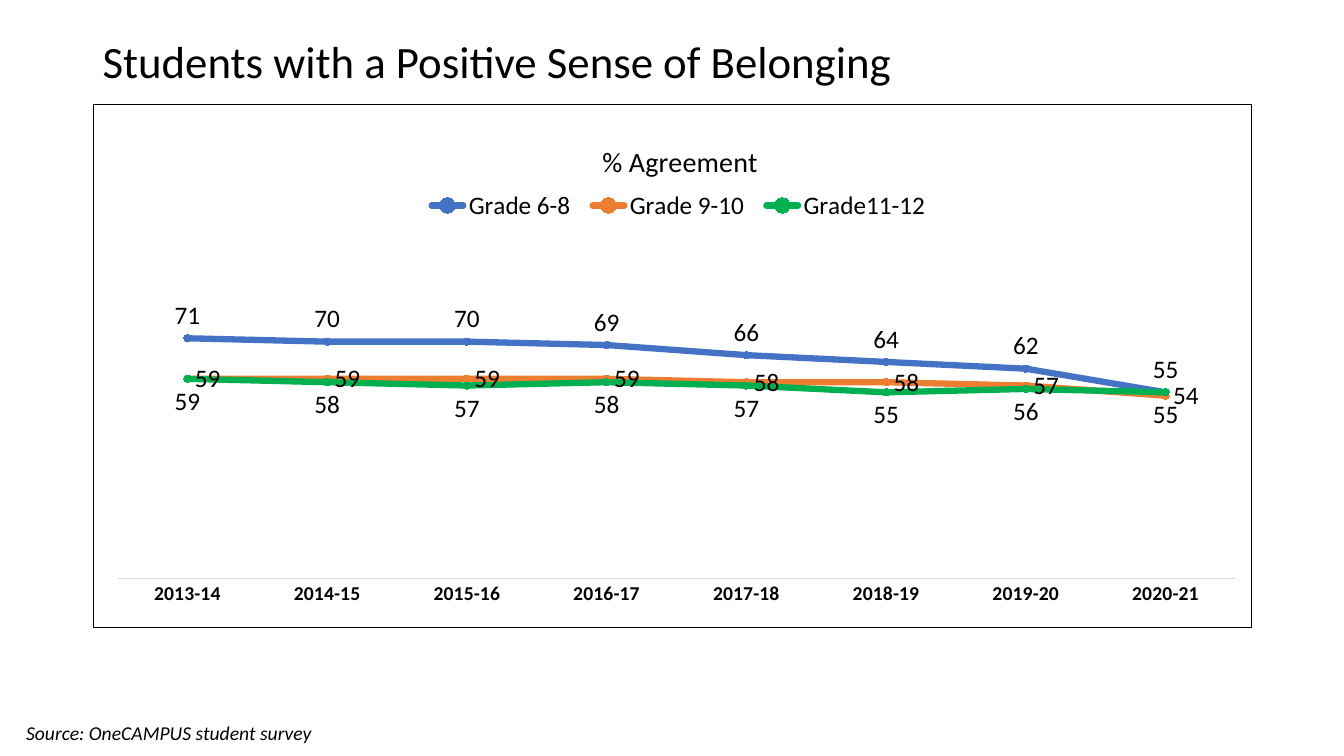
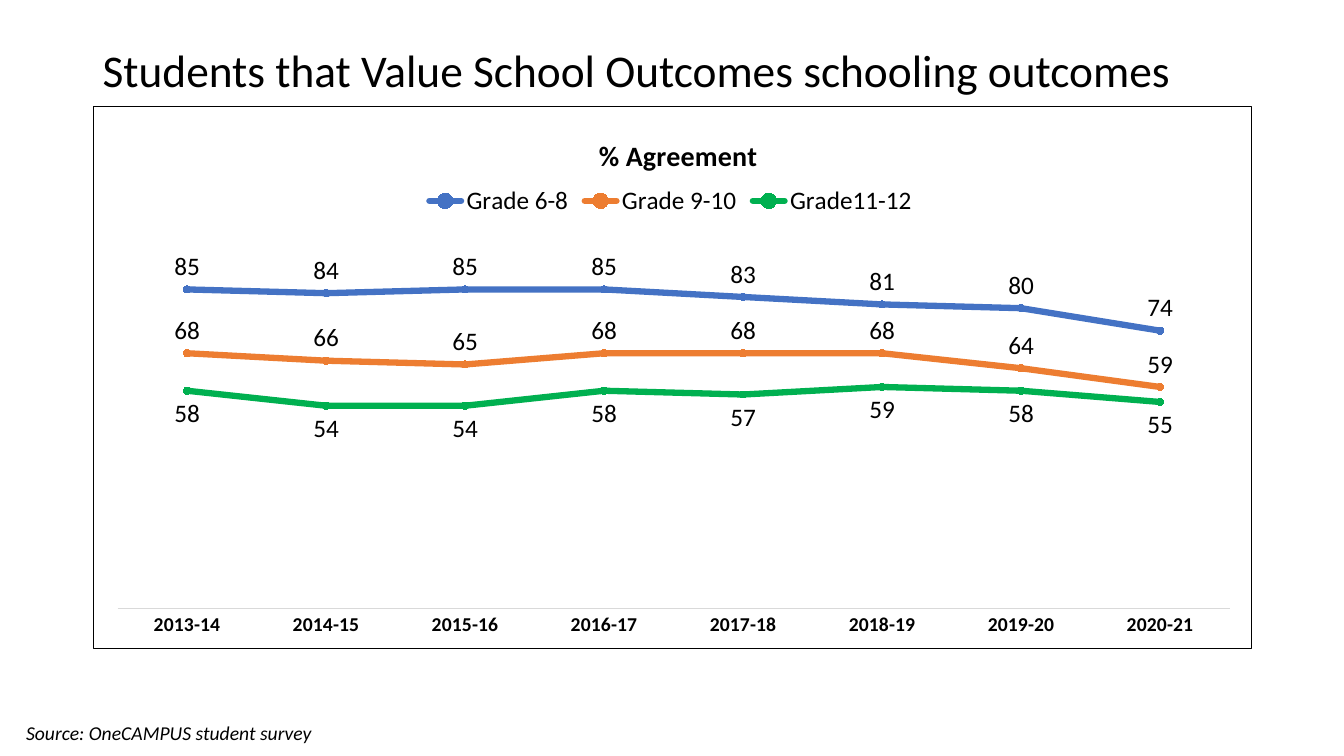
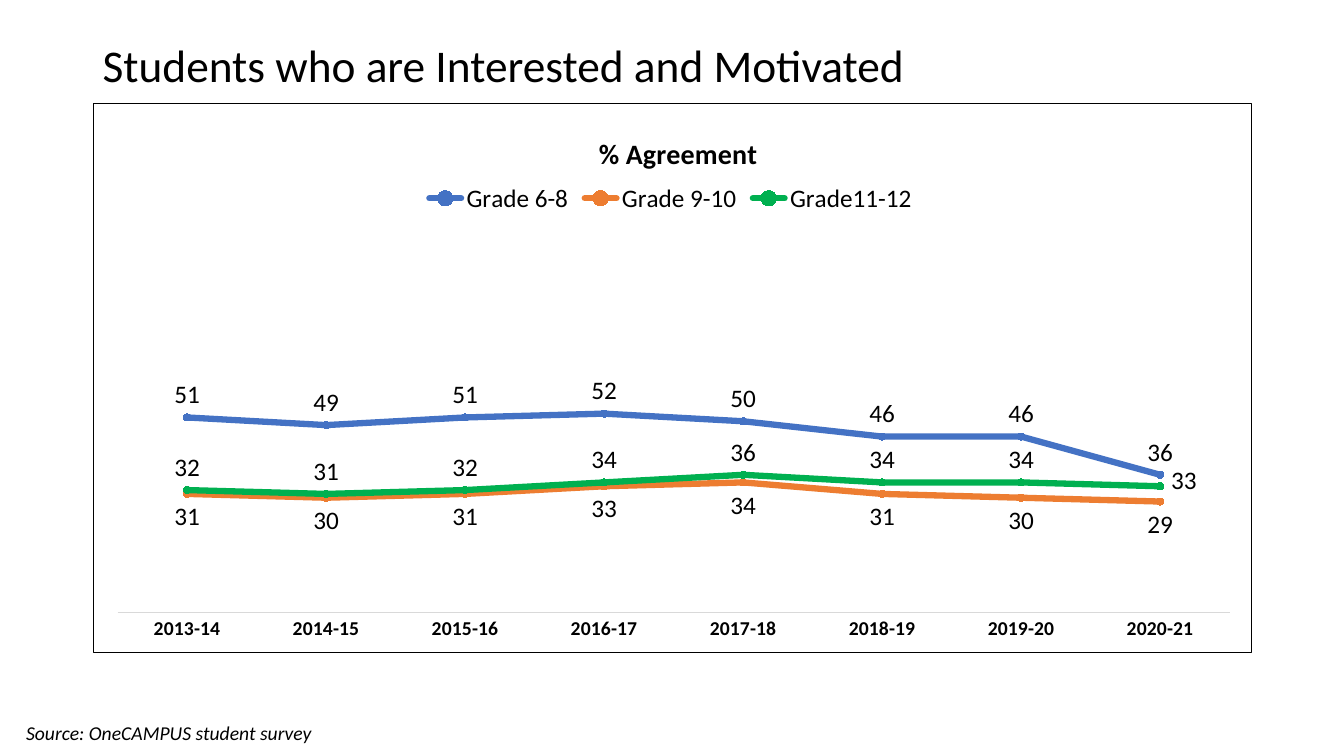
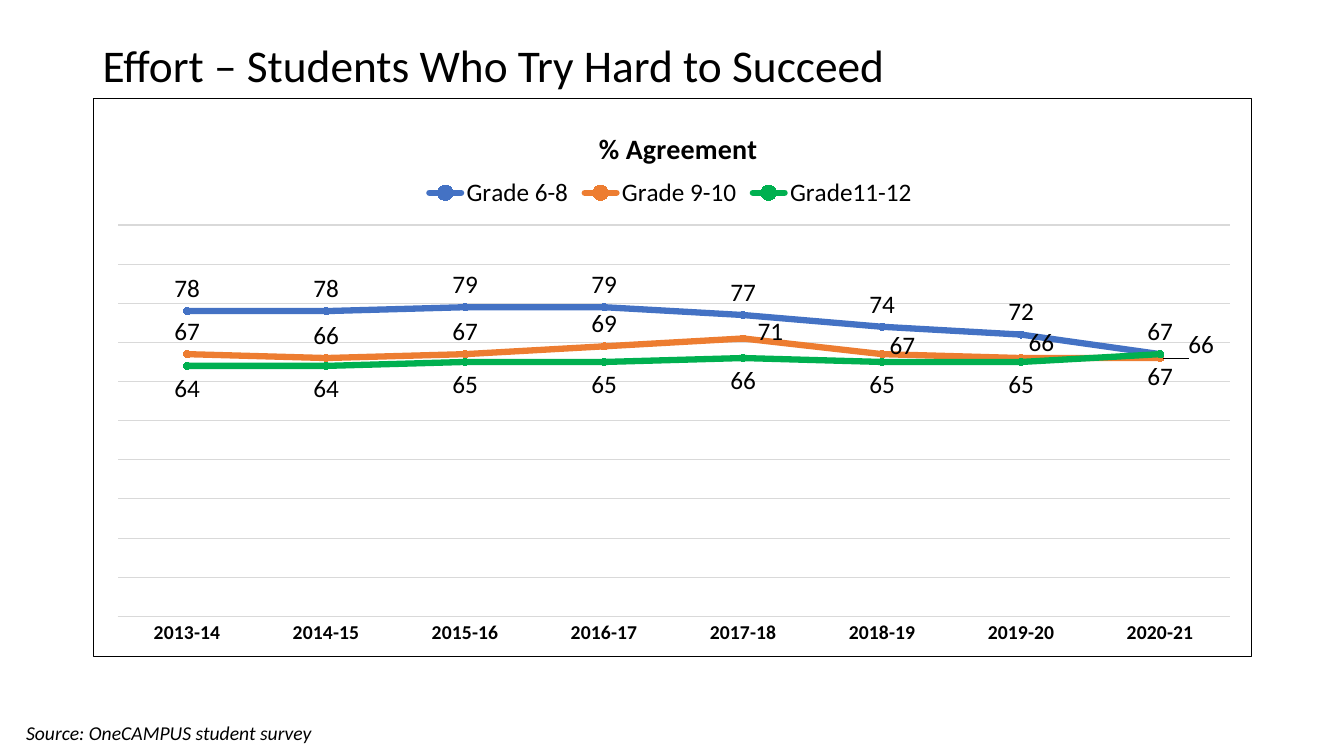
from dataclasses import dataclass

from lxml import etree
from pptx import Presentation
from pptx.chart.data import CategoryChartData
from pptx.dml.color import RGBColor
from pptx.enum.chart import (
    XL_CHART_TYPE, XL_LABEL_POSITION, XL_LEGEND_POSITION, XL_MARKER_STYLE, XL_TICK_MARK,
)
from pptx.enum.text import MSO_ANCHOR, MSO_AUTO_SIZE
from pptx.oxml import parse_xml
from pptx.oxml.ns import nsdecls, qn
from pptx.util import Inches, Pt

LINE_MARKERS = XL_CHART_TYPE.LINE_MARKERS
ABOVE = XL_LABEL_POSITION.ABOVE
BELOW = XL_LABEL_POSITION.BELOW
RIGHT = XL_LABEL_POSITION.RIGHT
LEGEND_TOP = XL_LEGEND_POSITION.TOP
CIRCLE = XL_MARKER_STYLE.CIRCLE
NO_TICK = XL_TICK_MARK.NONE
MIDDLE = MSO_ANCHOR.MIDDLE
GROW = MSO_AUTO_SIZE.SHAPE_TO_FIT_TEXT

FONT = "Calibri"
BLACK = "000000"
WHITE = "FFFFFF"
GRAY = "D9D9D9"
LEFT = 0.92
WIDTH = 11.5
SOURCE = "Source: OneCAMPUS student survey"
YEARS = [f"{year}-{year - 1999}" for year in range(2013, 2021)]
GRADES = (("Grade 6-8", "4472C4"), ("Grade 9-10", "ED7D31"), ("Grade11-12", "00B050"))


@dataclass(frozen=True)
class Arrangement:
    title_left: float = 0.432
    title_top: float = 0.25
    legend_left: float = 0.283
    legend_top: float = 0.74
    legend_size: tuple[float, float] | None = None
    plot_width: float = 0.96
    plot_top: float = 1.26
    plot_bottom: float = 0.4


@dataclass(frozen=True)
class LabelShift:
    series: int
    point: int
    x: float
    y: float


@dataclass(frozen=True)
class SurveyPage:
    title: str
    title_top: float
    title_height: float
    chart_top: float
    chart_height: float
    values: tuple[tuple[int, ...], ...]
    positions: tuple
    title_size: float = 32.4
    bold: bool = True
    grid: bool = False
    shifts: tuple[LabelShift, ...] = ()
    arrangement: Arrangement = Arrangement()


PAGES = (
    SurveyPage(
        "Students with a Positive Sense of Belonging", 0.34, 0.58, 1.03, 5.2,
        ((71, 70, 70, 69, 66, 64, 62, 55),
         (59, 59, 59, 59, 58, 58, 57, 54),
         (59, 58, 57, 58, 57, 55, 56, 55)),
        (ABOVE, RIGHT, BELOW), title_size=32, bold=False,
        arrangement=Arrangement(0.435, 0.32, 0.28, 0.8, (0.45, 0.41), 0.965, 1.35, 0.49),
    ),
    SurveyPage(
        "Students that Value School Outcomes schooling outcomes", 0.14, 1.16, 1.05, 5.39,
        ((85, 84, 85, 85, 83, 81, 80, 74),
         (68, 66, 65, 68, 68, 68, 64, 59),
         (58, 54, 54, 58, 57, 59, 58, 55)),
        (ABOVE, ABOVE, BELOW),
    ),
    SurveyPage(
        "Students who are Interested and Motivated", 0.4, 0.55, 1.02, 5.46,
        ((51, 49, 51, 52, 50, 46, 46, 36),
         (31, 30, 31, 33, 34, 31, 30, 29),
         (32, 31, 32, 34, 36, 34, 34, 33)),
        (ABOVE, BELOW, ABOVE),
        shifts=(LabelShift(2, 7, 0.04, -0.06),),
    ),
    SurveyPage(
        "Effort – Students Who Try Hard to Succeed", 0.4, 0.54, 0.97, 5.55,
        ((78, 78, 79, 79, 77, 74, 72, 67),
         (67, 66, 67, 69, 71, 67, 66, 66),
         (64, 64, 65, 65, 66, 65, 65, 67)),
        (ABOVE, ABOVE, BELOW), grid=True,
        shifts=(LabelShift(1, 4, 0.07, -0.07), LabelShift(1, 5, 0, -0.09),
                LabelShift(1, 6, 0, -0.15), LabelShift(1, 7, 0.21, -0.14)),
    ),
)


def color(value: str) -> RGBColor:
    return RGBColor.from_string(value)


def set_font(font, size: float, bold: bool = False, italic: bool = False) -> None:
    font.name = FONT
    font.size = Pt(size)
    font.bold = bold
    font.italic = italic
    font.color.rgb = color(BLACK)


def set_line(line, value: str, width: float) -> None:
    line.color.rgb = color(value)
    line.width = Pt(width)


def add_text(page, text: str, left: float, top: float, width: float, height: float,
             size: float, italic: bool = False):
    box = page.shapes.add_textbox(Inches(left), Inches(top), Inches(width), Inches(height))
    frame = box.text_frame
    frame.word_wrap = True
    span = frame.paragraphs[0].add_run()
    span.text = text
    set_font(span.font, size, italic=italic)
    return frame


def set_layout(parent, index: int, x: float, y: float,
               size: tuple[float, float] | None = None,
               inner: bool = False, edge: bool = True) -> None:
    for old in parent.findall(qn("c:layout")):
        parent.remove(old)
    layout = parse_xml(f'<c:layout {nsdecls("c")}><c:manualLayout/></c:layout>')
    settings = [("layoutTarget", "inner")] if inner else []
    if edge:
        settings += [("xMode", "edge"), ("yMode", "edge")]
    settings += [("x", x), ("y", y)]
    if size:
        settings += [("w", size[0]), ("h", size[1])]
    for name, value in settings:
        etree.SubElement(layout[0], qn(f"c:{name}")).set("val", str(value))
    parent.insert(index, layout)


def add_border(chart) -> None:
    border = parse_xml(
        f'<c:spPr {nsdecls("c", "a")}>'
        f'<a:solidFill><a:srgbClr val="{WHITE}"/></a:solidFill>'
        f'<a:ln w="{Pt(0.75)}"><a:solidFill><a:srgbClr val="{BLACK}"/></a:solidFill></a:ln>'
        '</c:spPr>'
    )
    chart.element.find(qn("c:chart")).addnext(border)


def style_axes(chart, grid: bool) -> None:
    categories = chart.category_axis
    categories.major_tick_mark = NO_TICK
    categories.minor_tick_mark = NO_TICK
    set_font(categories.tick_labels.font, 14, bold=True)
    set_line(categories.format.line, GRAY, 0.75)
    values = chart.value_axis
    values.minimum_scale = 0
    values.maximum_scale = 100
    values.major_unit = 10
    values.visible = False
    values.has_major_gridlines = grid
    if grid:
        set_line(values.major_gridlines.format.line, GRAY, 0.75)


def style_series(series, value: str, position) -> None:
    series.smooth = False
    set_line(series.format.line, value, 4.5)
    marker = series.marker
    marker.style = CIRCLE
    marker.size = 5
    marker.format.fill.solid()
    marker.format.fill.fore_color.rgb = color(value)
    set_line(marker.format.line, value, 0.75)
    labels = series.data_labels
    labels.show_value = True
    labels.number_format = "0"
    labels.number_format_is_linked = False
    labels.position = position
    set_font(labels.font, 18)


def arrange(chart, survey: SurveyPage) -> None:
    place = survey.arrangement
    height = survey.chart_height

    def share(length: float) -> float:
        return round(length / height, 3)

    root = chart.element.find(qn("c:chart"))
    set_layout(root.find(qn("c:title")), 1, place.title_left, share(place.title_top))
    legend_size = place.legend_size
    if legend_size:
        legend_size = (legend_size[0], share(legend_size[1]))
    set_layout(root.find(qn("c:legend")), 1, place.legend_left, share(place.legend_top),
               legend_size)
    plot_height = height - place.plot_top - place.plot_bottom
    set_layout(root.find(qn("c:plotArea")), 0, 0.021, share(place.plot_top),
               (place.plot_width, share(plot_height)), inner=True)


def shift_label(chart, shift: LabelShift, height: float) -> None:
    label = chart.plots[0].series[shift.series].points[shift.point].data_label
    set_font(label.font, 18)
    label.position = RIGHT
    query = f'//c:ser[{shift.series + 1}]//c:dLbl[c:idx/@val="{shift.point}"]'
    node = chart.element.xpath(query)[0]
    set_layout(node, 1, round(shift.x / WIDTH, 3), round(shift.y / height, 3), edge=False)


def add_survey_chart(page, survey: SurveyPage) -> None:
    data = CategoryChartData(number_format="0")
    data.categories = YEARS
    for (name, _), values in zip(GRADES, survey.values):
        data.add_series(name, values)
    chart = page.shapes.add_chart(
        LINE_MARKERS, Inches(LEFT), Inches(survey.chart_top),
        Inches(WIDTH), Inches(survey.chart_height), data,
    ).chart
    add_border(chart)
    set_font(chart.font, 14)
    chart.has_title = True
    span = chart.chart_title.text_frame.paragraphs[0].add_run()
    span.text = "% Agreement"
    set_font(span.font, 20, bold=survey.bold)
    chart.has_legend = True
    chart.legend.position = LEGEND_TOP
    chart.legend.include_in_layout = False
    set_font(chart.legend.font, 18)
    style_axes(chart, survey.grid)
    plot = chart.plots[0]
    plot.vary_by_categories = False
    for series, (_, value), position in zip(plot.series, GRADES, survey.positions):
        style_series(series, value, position)
    for line in chart.element.xpath("//c:ser/c:spPr/a:ln"):
        line.set("cap", "rnd")
    for shift in survey.shifts:
        shift_label(chart, shift, survey.chart_height)
    arrange(chart, survey)


def add_survey_page(deck, survey: SurveyPage) -> None:
    page = deck.slides.add_slide(deck.slide_layouts[6])
    title = add_text(page, survey.title, LEFT, survey.title_top, WIDTH,
                     survey.title_height, survey.title_size)
    title.vertical_anchor = MIDDLE
    title.paragraphs[0].line_spacing = 0.9
    add_survey_chart(page, survey)
    source = add_text(page, SOURCE, 0.16, 7.1, 4.97, 0.34, 14, italic=True)
    source.auto_size = GROW


def main() -> None:
    deck = Presentation()
    deck.slide_width = Inches(13.33)
    deck.slide_height = Inches(7.5)
    for survey in PAGES:
        add_survey_page(deck, survey)
    deck.save("out.pptx")


if __name__ == "__main__":
    main()
